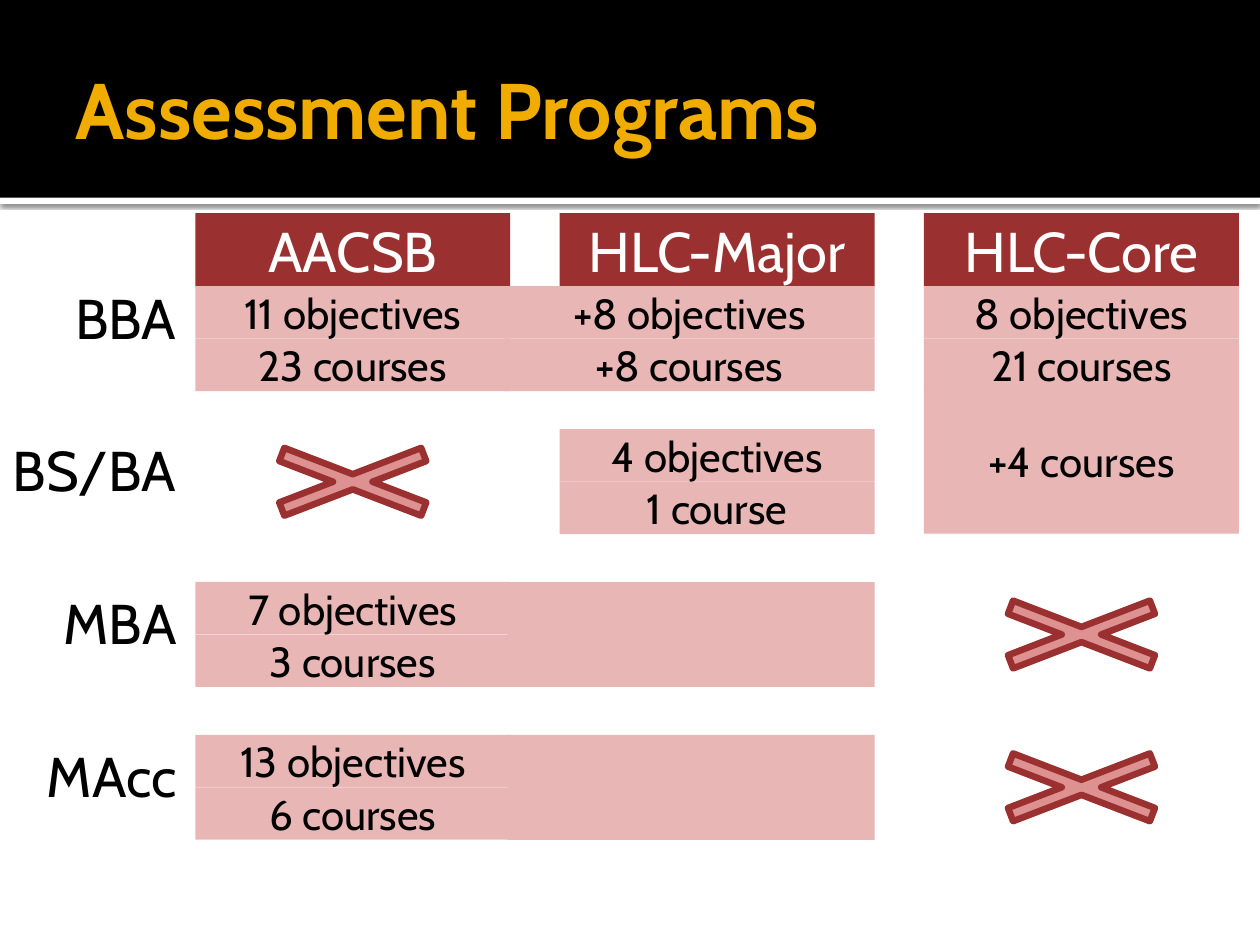
from lxml.etree import SubElement
from pptx import Presentation
from pptx.dml.color import RGBColor
from pptx.enum.shapes import MSO_SHAPE as Shape
from pptx.enum.text import MSO_ANCHOR as Anchor, PP_ALIGN as Align
from pptx.oxml.ns import qn
from pptx.util import Pt

COLORS = {
    "black": "000000", "white": "FFFFFF", "title": "F0AD00",
    "header": "9A3130", "cell": "E8B6B5", "cross": "DD9191",
}


def write(shape, text, size, color, align, **font_format):
    frame = shape.text_frame
    frame.word_wrap = True
    frame.vertical_anchor = Anchor.MIDDLE
    paragraph = frame.paragraphs[0]
    paragraph.alignment = align
    run = paragraph.add_run()
    run.text = text
    run.font.color.rgb = RGBColor.from_string(COLORS[color])
    for name, value in {"name": "Cabin", "size": Pt(size), **font_format}.items():
        setattr(run.font, name, value)


def add_block(left, top, width, height, fill, kind=Shape.RECTANGLE):
    block = slide.shapes.add_shape(kind, Pt(left), Pt(top), Pt(width), Pt(height))
    block.shadow.inherit = False
    block.fill.solid()
    block.fill.fore_color.rgb = RGBColor.from_string(COLORS[fill])
    block.line.fill.background()
    return block


prs = Presentation()
prs.slide_width, prs.slide_height = Pt(720), Pt(540)
slide = prs.slides.add_slide(prs.slide_layouts[5])

# Title band with a shadowed white strip below it
strip = add_block(0, 113, 720, 3.6, "white")
effects = strip._element.spPr.find(qn("a:effectLst"))
shadow = SubElement(effects, qn("a:outerShdw"), blurRad=str(Pt(2.5)),
                    dist=str(Pt(0.8)), dir="5400000", algn="tl", rotWithShape="0")
shade = SubElement(shadow, qn("a:srgbClr"), val=COLORS["black"])
SubElement(shade, qn("a:alpha"), val="60000")
add_block(0, 0, 720, 113, "black")

title = slide.shapes.title
slide.shapes._spTree.append(title._element)  # in front of the band
title_box = {"left": 36, "top": 12.25, "width": 648, "height": 98.6}
for name, value in title_box.items():
    setattr(title, name, Pt(value))
insets = {"margin_left": 7.2, "margin_top": 3.6, "margin_right": 3.6, "margin_bottom": 3.6}
for name, value in insets.items():
    setattr(title.text_frame, name, Pt(value))
write(title, "Assessment Programs", 45, "title", Align.LEFT, bold=True)

# Grid
COLUMN_WIDTH, LINE_HEIGHT = 180, 30
columns = [111.6 + 208.2 * i for i in range(3)]
rows = [158 + 87.3 * i for i in range(4)]
first_cell_top = 163.6  # the first row's cells touch the headers
major_right = columns[1] + COLUMN_WIDTH

# Program labels
for program, top in zip(["BBA", "BS/BA", "MBA", "MAcc"], rows):
    label = slide.shapes.add_textbox(Pt(0), Pt(top), Pt(108), Pt(46))
    write(label, program, 32, "black", Align.RIGHT)

# Column headers
for accreditation, left in zip(["AACSB", "HLC-Major", "HLC-Core"], columns):
    header = add_block(left, 121.8, COLUMN_WIDTH, 42, "header")
    write(header, accreditation, 32, "white", Align.CENTER)

# Cells: left, right, top, lines of text
cells = [
    (columns[0], columns[0] + COLUMN_WIDTH, first_cell_top, ["11 objectives", "23 courses"]),
    (288, major_right, first_cell_top, ["+8 objectives", "+8 courses"]),
    (columns[2], columns[2] + COLUMN_WIDTH, first_cell_top, ["8 objectives", "21 courses"]),
    (columns[1], major_right, rows[1], ["4 objectives", "1 course"]),
    (columns[0], columns[0] + COLUMN_WIDTH, rows[2], ["7 objectives", "3 courses"]),
    (columns[0], columns[0] + COLUMN_WIDTH, rows[3], ["13 objectives", "6 courses"]),
]
for left, right, top, lines in cells:
    for i, text in enumerate(lines):
        cell = add_block(left, top + i * LINE_HEIGHT, right - left, LINE_HEIGHT, "cell")
        write(cell, text, 24, "black", Align.CENTER)

# Core courses shared by BBA and BS/BA
shared_core = add_block(columns[2], 222, COLUMN_WIDTH, 83, "cell")
write(shared_core, "+4 courses", 24, "black", Align.CENTER)

# Graduate programs extend across the major column
for top in rows[2:]:
    add_block(290, top, major_right - 290, 2 * LINE_HEIGHT, "cell")

# Crosses where a program does not apply
for column, row in [(0, 1), (2, 2), (2, 3)]:
    cross = add_block(columns[column] + 12, rows[row], 156, 60, "cross", Shape.MATH_MULTIPLY)
    cross.adjustments[0] = 0.135
    cross.line.color.rgb = RGBColor.from_string(COLORS["header"])
    cross.line.width = Pt(3.78)

prs.save("out.pptx")
